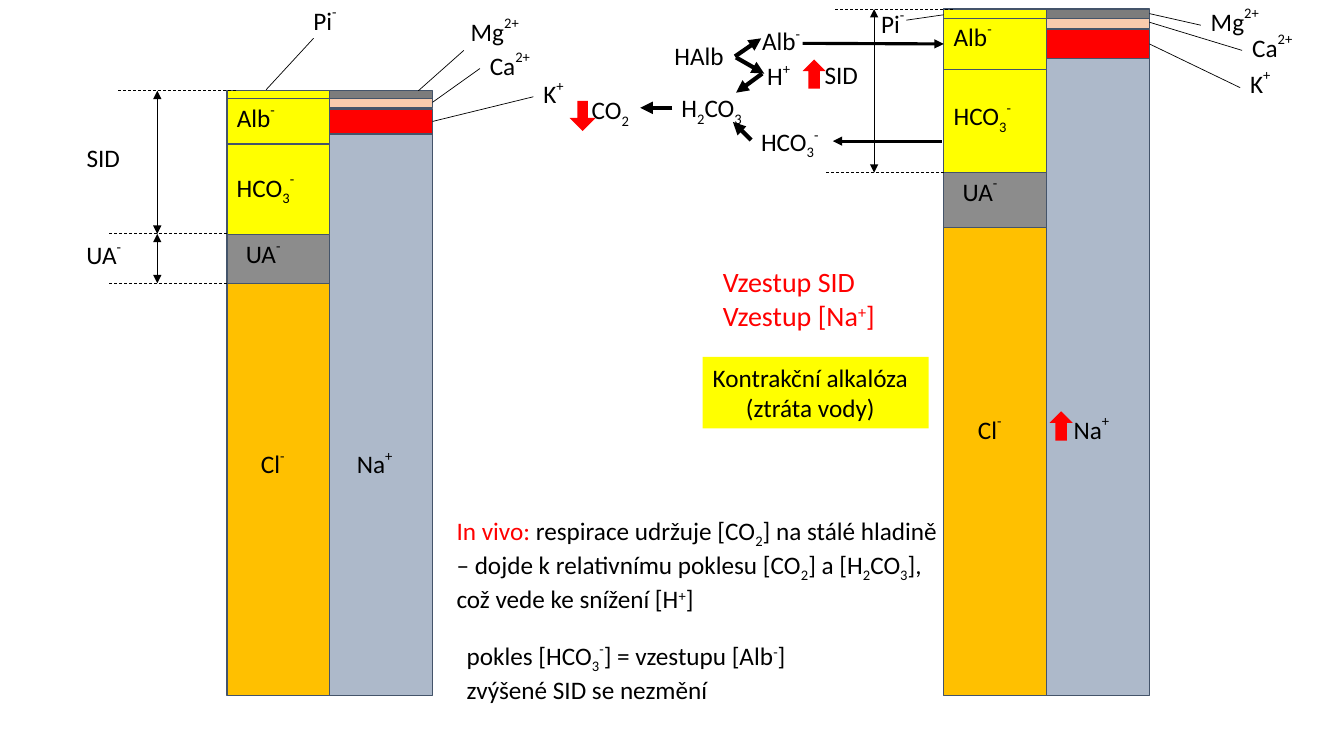
from lxml import etree
from pptx import Presentation, util as u
from pptx.dml.color import RGBColor
from pptx.enum import dml, shapes, text
from pptx.oxml.ns import qn

COLORS = {"black": "000000", "red": "FF0000", "yellow": "FFFF00", "border": "44546A",
          "sodium": "ADB9CA", "calcium": "F8CBAD", "magnesium": "7C7C7C",
          "chloride": "FFC000", "anions": "8C8C8C"}
BASELINES = {"_": -25000, "~": 30000, "*": 42000, "^": 50000}

BASE = 6.9          # bottom of both ionograms
COLUMN = 1.02       # width of one stack
# name, colour, stack (0 anions, 1 cations), top and bottom above the base at scale 1
BLOCKS = [("Na", "sodium", 1, 5.57, 0), ("K", "red", 1, 5.82, 5.57),
          ("Ca", "calcium", 1, 5.94, 5.83), ("Mg", "magnesium", 1, 6, 5.92),
          ("Cl", "chloride", 0, 4.09, 0), ("Pi", "yellow", 0, 6, 5.9),
          ("UA", "anions", 0, 4.58, 4.09), ("HCO3", "yellow", 0, 5.47, 4.57),
          ("Alb", "yellow", 0, 5.92, 5.47)]
# label, offset from the left edge, top above the base at scale 1, width
ION_LABELS = [("Na|^+", 1.19, 2.52, 0.72), ("Cl|^-", 0.24, 2.52, 0.59),
              ("UA|^-", 0.09, 4.6, 0.76), ("HCO|_3|^-", 0, 5.26, 1.1),
              ("Alb|^-", 0, 5.95, 0.78)]


def inches(*lengths):
    return [u.Inches(length) for length in lengths]


def rgb(name):
    return RGBColor.from_string(COLORS[name])


def add_block(slide, box, fill, border=None, kind=shapes.MSO_SHAPE.RECTANGLE):
    shape = slide.shapes.add_shape(kind, *inches(*box))
    shape.shadow.inherit = False
    shape.fill.solid()
    shape.fill.fore_color.rgb = rgb(fill)
    if border:
        shape.line.color.rgb = rgb(border)
        shape.line.width = u.Pt(1)
    else:
        shape.line.fill.background()
    return shape


def add_text(slide, box, *lines, wrap=False, size=18, color="black"):
    """Write lines whose runs are split by "|"; a leading mark sets baseline, "!" sets red."""
    shape = slide.shapes.add_textbox(*inches(*box))
    frame = shape.text_frame
    frame.word_wrap = wrap
    frame.auto_size = text.MSO_AUTO_SIZE.SHAPE_TO_FIT_TEXT
    for number, line in enumerate(lines):
        paragraph = frame.add_paragraph() if number else frame.paragraphs[0]
        for piece in line.split("|"):
            marked = piece[0] in BASELINES or piece[0] == "!"
            run = paragraph.add_run()
            run.text = piece[1:] if marked else piece
            run.font.name = "Calibri"
            run.font.size = u.Pt(size)
            run.font.color.rgb = rgb("red" if piece[0] == "!" else color)
            if piece[0] in BASELINES:
                run.font._element.set("baseline", str(BASELINES[piece[0]]))
    return shape


def add_line(slide, start, end, width=0.5, dashed=False, arrows=(), joined=None):
    """Draw a line; arrows names its ends ("headEnd", "tailEnd"), joined is (shape, side) at its end."""
    connector = slide.shapes.add_connector(shapes.MSO_CONNECTOR.STRAIGHT, *inches(*start, *end))
    connector.line.color.rgb = rgb("black")
    connector.line.width = u.Pt(width)
    if dashed:
        connector.line.dash_style = dml.MSO_LINE.DASH
    line = connector.line._get_or_add_ln()
    for arrow in arrows:
        etree.SubElement(line, qn("a:" + arrow)).set("type", "triangle")
    etree.SubElement(connector._element.spPr, qn("a:effectLst"))
    if joined:
        connector.end_connect(*joined)


def add_ionogram(slide, left, scale, bounds):
    """Stack anions and cations from the base up; bounds name the dashed levels. Return the blocks."""
    def level(height):
        return BASE - height * scale

    blocks = {}
    for name, color, stack, top, bottom in BLOCKS:
        box = (left + stack * COLUMN, level(top), COLUMN, (top - bottom) * scale)
        blocks[name] = add_block(slide, box, color, "border")
    for label, offset, height, width in ION_LABELS:
        add_text(slide, (left + offset, level(height), width, 0.5), label)

    for number, height in enumerate(bounds):
        right = left if number else left + 0.09
        add_line(slide, (right, level(height)), (right - 1.18, level(height)), dashed=True)
    for upper, lower in zip(bounds, bounds[1:]):
        add_line(slide, (left - 0.69, level(upper)), (left - 0.69, level(lower)),
                 arrows=("headEnd", "tailEnd"))
    return blocks


def add_normal_state(slide):
    blocks = add_ionogram(slide, 2.25, 1, (6, 4.58, 4.09))
    for label, x, y, width in [("Pi|^-", 3.01, -0.02, 0.56), ("Mg|^2+", 4.57, 0.09, 0.91),
                               ("Ca|^2+", 4.76, 0.43, 0.81), ("K|^+", 5.29, 0.71, 0.57),
                               ("SID", 0.76, 1.36, 0.75), ("UA|^-", 0.76, 2.31, 0.76)]:
        add_text(slide, (x, y, width, 0.5), label)
    add_line(slide, (3.11, 0.38), (2.64, 0.89))
    add_line(slide, (4.6, 0.5), (4.15, 0.9))
    add_line(slide, (4.76, 0.68), (4.29, 1.02), joined=(blocks["Ca"], 3))
    add_line(slide, (5.29, 0.96), (4.29, 1.21), joined=(blocks["K"], 3))


def add_contracted_state(slide):
    """Draw the ionogram concentrated by water loss and return its blocks."""
    blocks = add_ionogram(slide, 9.36, 1.135, (6, 4.57))
    for label, x, y, width in [("Mg|^2+", 11.91, -0.01, 0.91), ("Ca|^2+", 12.32, 0.25, 0.81),
                               ("K|^+", 12.3, 0.61, 0.57), ("SID", 8.08, 0.54, 0.75),
                               ("Pi|^-", 8.64, 0.01, 0.56)]:
        add_text(slide, (x, y, width, 0.5), label)
    for name, start, side in [("Mg", (11.91, 0.25), 3), ("Ca", (12.32, 0.5), 3),
                              ("K", (12.3, 0.87), 3), ("Pi", (8.99, 0.2), 1)]:
        add_line(slide, start, start, joined=(blocks[name], side))
    for x, y in [(7.96, 0.59), (10.41, 4.08)]:
        add_block(slide, (x, y, 0.23, 0.29), "red", kind=shapes.MSO_SHAPE.UP_ARROW)
    return blocks


def add_reactions(slide, albumin):
    for label, x, y, width in [("CO|_2", 5.77, 0.89, 0.88), ("HCO|_3|*-", 7.45, 1.2, 0.96),
                               ("H|*+", 7.51, 0.55, 1), ("HAlb", 6.59, 0.35, 0.82),
                               ("H|_2|CO|_3", 6.66, 0.87, 1), ("Alb|*-", 7.46, 0.2, 1)]:
        add_text(slide, (x, y, width, 0.4), label, wrap=True)
    for start, end in [((7.45, 1.39), (7.27, 1.21)), ((7.3, 0.57), (7.58, 0.73)),
                       ((6.67, 1.07), (6.35, 1.07)), ((7.56, 0.73), (7.3, 0.92)),
                       ((7.29, 0.56), (7.55, 0.38))]:
        add_line(slide, start, end, width=3, arrows=["tailEnd"])
    add_line(slide, (7.96, 0.43), (9.35, 0.43), width=2.25, arrows=["tailEnd"],
             joined=(albumin, 1))
    add_line(slide, (9.34, 1.4), (8.26, 1.4), width=2.25, arrows=["tailEnd"])
    arrow = add_block(slide, (5.65, 1, 0.26, 0.3), "red", kind=shapes.MSO_SHAPE.DOWN_ARROW)
    arrow.adjustments[0] = 0.4


def add_conclusions(slide):
    add_text(slide, (7.07, 2.58, 1.81, 0.77), "Vzestup SID", "Vzestup [Na|~+|]",
             size=20, color="red")
    diagnosis = add_text(slide, (6.97, 3.54, 2.24, 0.71), "Kontrakční alkalóza", "(ztráta vody)")
    diagnosis.fill.solid()
    diagnosis.fill.fore_color.rgb = rgb("yellow")
    diagnosis.text_frame.paragraphs[1].alignment = text.PP_ALIGN.CENTER
    add_text(slide, (4.43, 5.06, 5.06, 1.01),
             "!In vivo: |respirace udržuje [CO|_2|] na stálé hladině – dojde k relativnímu "
             "poklesu [CO|_2|] a [H|_2|CO|_3|], což vede ke snížení [H|~+|]", wrap=True)
    add_text(slide, (4.53, 6.3, 4.62, 0.71), "pokles [HCO|_3|*-|] = vzestupu [Alb|~-|]",
             "zvýšené SID se nezmění", wrap=True)


def main():
    presentation = Presentation()
    presentation.slide_width, presentation.slide_height = inches(13.33, 7.5)
    slide = presentation.slides.add_slide(presentation.slide_layouts[6])
    add_normal_state(slide)
    blocks = add_contracted_state(slide)
    add_reactions(slide, blocks["Alb"])
    add_conclusions(slide)
    presentation.save("out.pptx")


if __name__ == "__main__":
    main()
